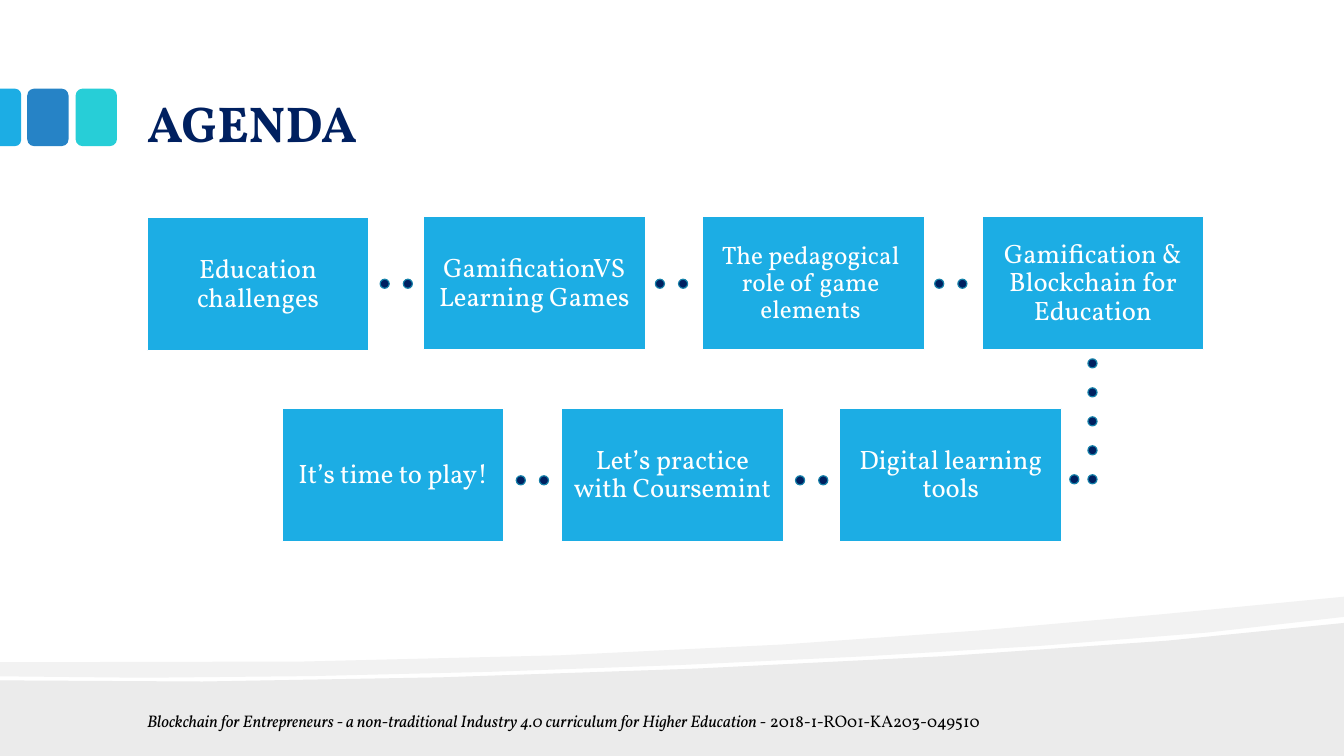
"""Builds the agenda slide: seven topic boxes linked by dotted trails."""
import pptx
import pptx.util
import pptx.dml.color
import pptx.enum.shapes
import pptx.enum.text

Inches = pptx.util.Inches
Pt = pptx.util.Pt
RGBColor = pptx.dml.color.RGBColor
MSO_SHAPE = pptx.enum.shapes.MSO_SHAPE
PP_ALIGN = pptx.enum.text.PP_ALIGN
MSO_ANCHOR = pptx.enum.text.MSO_ANCHOR

WHITE = RGBColor(0xFF, 0xFF, 0xFF)
BLACK = RGBColor(0, 0, 0)
NAVY = RGBColor(0x00, 0x20, 0x60)
SKY = RGBColor(0x1C, 0xAD, 0xE4)
BLUE = RGBColor(0x26, 0x83, 0xC6)
TEAL = RGBColor(0x27, 0xCE, 0xD7)
DOT_EDGE = RGBColor(0x15, 0x80, 0xA9)
WAVE_DARK = RGBColor(0xEB, 0xEB, 0xEB)
WAVE_LIGHT = RGBColor(0xF2, 0xF2, 0xF2)
FONT = "Vollkorn"

deck = pptx.Presentation()
deck.slide_width = Inches(13.33)
deck.slide_height = Inches(7.5)
slide = deck.slides.add_slide(deck.slide_layouts[5])
shapes = slide.shapes


def curve(start, control1, control2, end, steps=6):
    points = []
    for step in range(steps + 1):
        t = step / steps
        weights = ((1 - t) ** 3, 3 * t * (1 - t) ** 2, 3 * t ** 2 * (1 - t), t ** 3)
        corners = (start, control1, control2, end)
        points.append(tuple(sum(w * c[axis] for w, c in zip(weights, corners))
                            for axis in (0, 1)))
    return points


def add_filled(kind, left, top, width, height, fill, edge=None):
    shape = shapes.add_shape(kind, Inches(left), Inches(top), Inches(width), Inches(height))
    shape.shadow.inherit = False
    shape.fill.solid()
    shape.fill.fore_color.rgb = fill
    if edge is None:
        shape.line.fill.background()
    else:
        shape.line.color.rgb = edge
        shape.line.width = Pt(0.85)
    return shape


lower_wave = [(13.33, 7.5), (0, 7.5)]
lower_wave += curve((0, 6.75), (3.52, 6.83), (10.42, 6.55), (13.33, 6.18))
upper_wave = curve((13.33, 6.12), (12.56, 6.23), (11.49, 6.33), (10.29, 6.41), steps=2)
upper_wave += curve((10.29, 6.41), (6.98, 6.63), (2.58, 6.77), (0, 6.71))[1:]
upper_wave += curve((0, 6.57), (6.52, 6.62), (9.71, 6.27), (13.33, 5.92))
for outline, shade in ((lower_wave, WAVE_DARK), (upper_wave, WAVE_LIGHT)):
    corners = [(Inches(x), Inches(y)) for x, y in outline]
    builder = shapes.build_freeform(*corners[0])
    builder.add_line_segments(corners[1:])
    wave = builder.convert_to_shape()
    wave.shadow.inherit = False
    wave.fill.solid()
    wave.fill.fore_color.rgb = shade
    wave.line.fill.background()

for left, color in ((0.75, TEAL), (0.27, BLUE)):
    add_filled(MSO_SHAPE.ROUNDED_RECTANGLE, left, 0.88, 0.41, 0.57, color)
edge_tab = add_filled(MSO_SHAPE.ROUND_2_SAME_RECTANGLE, -0.18, 1.06, 0.57, 0.21, SKY)
edge_tab.rotation = 90
edge_tab.adjustments[0] = 0.29

title = shapes.title
title.left, title.top = Inches(1.33), Inches(0.16)
title.width, title.height = Inches(10.67), Inches(1.42)
title.text_frame.text = "AGENDA"
title.text_frame.vertical_anchor = MSO_ANCHOR.BOTTOM
heading = title.text_frame.paragraphs[0]
heading.alignment = PP_ALIGN.LEFT
heading.runs[0].font.name = FONT
heading.runs[0].font.size = Pt(36)
heading.runs[0].font.bold = True
heading.runs[0].font.color.rgb = NAVY

footer = shapes.add_textbox(Inches(1.33), Inches(7.05), Inches(9.07), Inches(0.2))
footer.text_frame.word_wrap = True
footer.text_frame.vertical_anchor = MSO_ANCHOR.MIDDLE
credit = footer.text_frame.paragraphs[0]
for text, italic in (
    ("Blockchain for Entrepreneurs - a non-traditional Industry 4.0 curriculum "
     "for Higher Education - ", True),
    ("2018-1-RO01-KA203-049510", False),
):
    run = credit.add_run()
    run.text = text
    run.font.italic = italic
    run.font.name = FONT
    run.font.size = Pt(12)
    run.font.color.rgb = BLACK

for frame in (title.text_frame, footer.text_frame):
    frame.margin_left = frame.margin_right = Inches(0.13)
    frame.margin_top = frame.margin_bottom = Inches(0.07)

topics = [
    ("Education challenges", 1.46, 2.16, 19, 0.08),
    ("GamificationVS Learning Games", 4.2, 2.15, 19, 0.08),
    ("The pedagogical role of game elements", 6.97, 2.15, 18, 0.14),
    ("Gamification & Blockchain for Education", 9.74, 2.15, 19, 0.08),
    ("Digital learning tools", 8.33, 4.05, 19, 0.08),
    ("Let’s practice with Coursemint", 5.57, 4.05, 19, 0.08),
    ("It’s time to play!", 2.8, 4.05, 19, 0.08),
]
for topic, left, top, size, right_margin in topics:
    box = add_filled(MSO_SHAPE.RECTANGLE, left, top, 2.2, 1.32, SKY, WHITE)
    frame = box.text_frame
    frame.text = topic
    frame.word_wrap = True
    frame.vertical_anchor = MSO_ANCHOR.MIDDLE
    frame.margin_left = frame.margin_top = frame.margin_bottom = Inches(0.08)
    frame.margin_right = Inches(right_margin)
    label = frame.paragraphs[0]
    label.alignment = PP_ALIGN.CENTER
    label.line_spacing = 0.9
    label.runs[0].font.name = FONT
    label.runs[0].font.size = Pt(size)
    label.runs[0].font.color.rgb = WHITE

dots = [(10.61, 4.71)] + [(10.79, 3.56 + 0.2875 * step) for step in range(5)]
for left, top in ((3.77, 2.77), (6.5, 2.77), (9.27, 2.77), (5.12, 4.72), (7.89, 4.72)):
    dots += [(left, top), (left + 0.23, top)]
for left, top in dots:
    add_filled(MSO_SHAPE.FLOWCHART_CONNECTOR, left, top, 0.09, 0.09, NAVY, DOT_EDGE)

deck.save("out.pptx")
